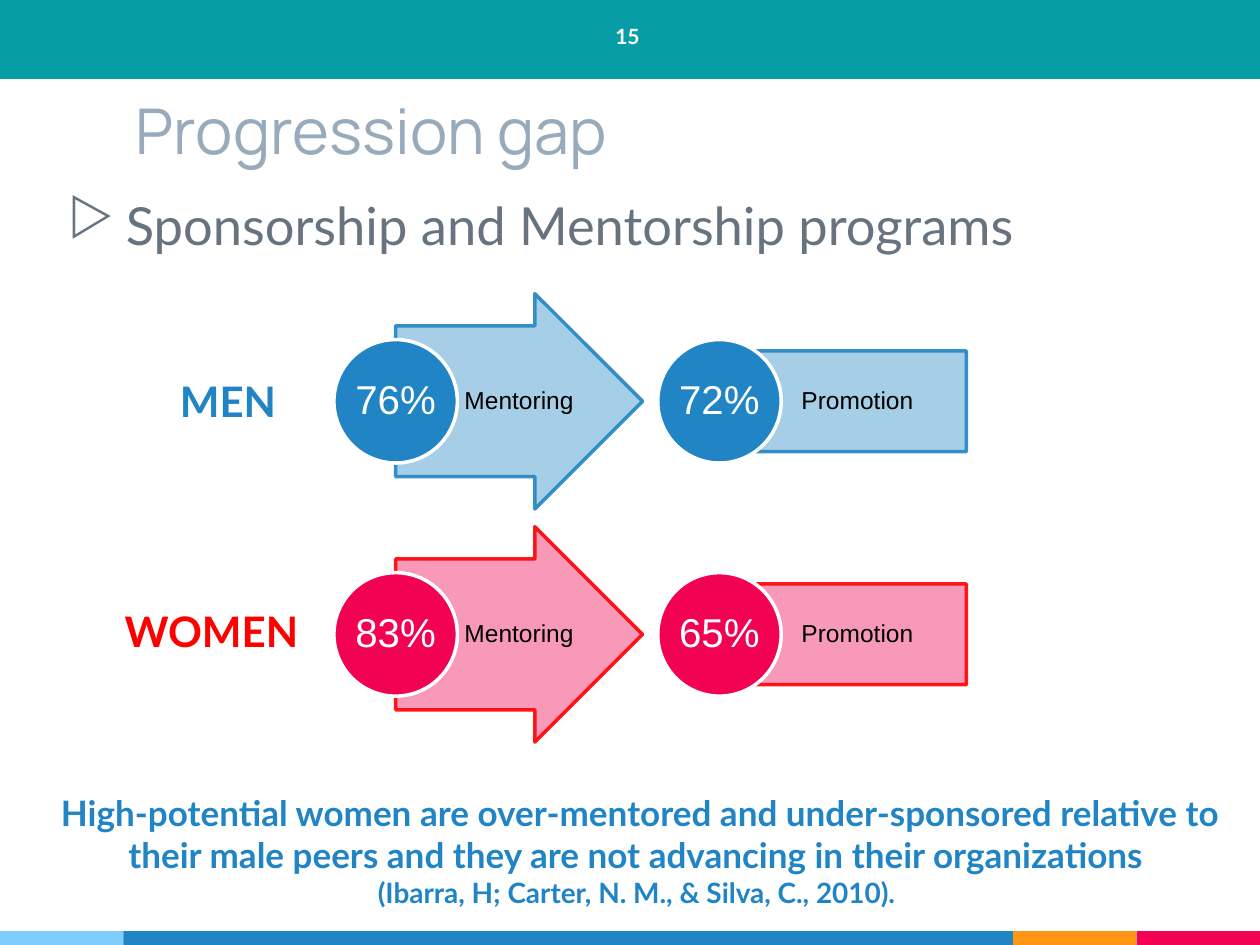
from lxml import etree
from pptx import Presentation
from pptx.dml.color import RGBColor
from pptx.enum.shapes import MSO_SHAPE
from pptx.enum.text import MSO_ANCHOR, PP_ALIGN
from pptx.oxml.ns import qn
from pptx.util import Inches, Pt

RECTANGLE, ELLIPSE, ARROW = MSO_SHAPE.RECTANGLE, MSO_SHAPE.OVAL, MSO_SHAPE.RIGHT_ARROW
TOP, MIDDLE, BOTTOM = MSO_ANCHOR.TOP, MSO_ANCHOR.MIDDLE, MSO_ANCHOR.BOTTOM
LEFT, CENTER = PP_ALIGN.LEFT, PP_ALIGN.CENTER

BLUE = RGBColor(0x21, 0x85, 0xC5)
SKY = RGBColor(0x7E, 0xCE, 0xFD)
ORANGE = RGBColor(0xFF, 0x97, 0x15)
PINK = RGBColor(0xF2, 0x02, 0x53)
RED = RGBColor(0xFF, 0x00, 0x00)
TEAL = RGBColor(0x06, 0x9D, 0xA6)
TITLE_GREY = RGBColor(0x97, 0xAB, 0xBC)
BODY_GREY = RGBColor(0x67, 0x74, 0x80)
WHITE = RGBColor(0xFF, 0xFF, 0xFF)
BLACK = RGBColor(0x00, 0x00, 0x00)


def set_opacity(fill_owner, percent):
    """Make the solid fill of a shape or line element partly transparent."""
    color = fill_owner.find(qn("a:solidFill"))[0]
    etree.SubElement(color, qn("a:alpha")).set("val", str(percent * 1000))


def add_block(slide, kind, box, fill, line=None, line_width=2):
    shape = slide.shapes.add_shape(kind, *map(Inches, box))
    shape.shadow.inherit = False
    shape.fill.solid()
    shape.fill.fore_color.rgb = fill
    if line is None:
        shape.line.fill.background()
    else:
        shape.line.color.rgb = line
        shape.line.width = Pt(line_width)
    return shape


def add_text(slide, box, lines, color, font="Lato", bold=False, align=LEFT,
             anchor=TOP, insets=(0.1, 0.05, 0.1, 0.05)):
    """Add a text box; lines holds one (text, size) pair per paragraph."""
    text_frame = slide.shapes.add_textbox(*map(Inches, box)).text_frame
    text_frame.word_wrap = True
    text_frame.vertical_anchor = anchor
    (text_frame.margin_left, text_frame.margin_top,
     text_frame.margin_right, text_frame.margin_bottom) = map(Inches, insets)
    text_frame.text = "\n".join(text for text, _ in lines)
    for paragraph, (_, size) in zip(text_frame.paragraphs, lines):
        paragraph.alignment = align
        font_format = paragraph.runs[0].font
        font_format.name = font
        font_format.size = Pt(size)
        font_format.bold = bold
        font_format.color.rgb = color
    return text_frame


def add_footer(slide, left, top, width, height):
    end = 0.98
    middle = width - 3 * end
    for color, part in ((SKY, end), (BLUE, middle), (ORANGE, end), (PINK, end)):
        add_block(slide, RECTANGLE, (left, top, part, height), color)
        left += part


def add_header(slide, left, top, width, height):
    add_block(slide, RECTANGLE, (left, top, width, height), TEAL, TEAL, 0.75)
    add_text(slide, (left + 4.45, top + 0.14, 1.06, 0.3), [("15", 12)], WHITE,
             bold=True, align=CENTER)


def add_bullet(slide, left, top, width, height):
    text_frame = add_text(slide, (left, top, width, height),
                          [("Sponsorship and Mentorship programs", 30)],
                          BODY_GREY, insets=(0.1,) * 4)
    paragraph = text_frame.paragraphs[0]
    paragraph.space_before = paragraph.space_after = Pt(6)
    properties = paragraph.runs[0]._r.getparent().get_or_add_pPr()
    properties.set("marL", str(Inches(0.5)))
    properties.set("indent", str(Inches(-0.46)))
    bullet_color = etree.SubElement(properties, qn("a:buClr"))
    etree.SubElement(bullet_color, qn("a:srgbClr")).set("val", str(BODY_GREY))
    etree.SubElement(properties, qn("a:buChar")).set("char", "▷")


def add_stage(slide, left, middle, kind, height, label, label_width, share, fill, line):
    """Add a pale arrow or bar whose left end carries a circle with a share."""
    circle, inner = 0.98, 0.69
    pale = add_block(slide, kind, (left + circle / 2, middle - height / 2, 1.96, height),
                     fill, line)
    if kind == ARROW:
        pale.adjustments[0], pale.adjustments[1] = 0.7, 0.5
    set_opacity(pale._element.spPr, 40)
    set_opacity(pale._element.spPr.find(qn("a:ln")), 90)
    label_height = height * 0.7
    label_frame = add_text(
        slide, (left + circle, middle - label_height / 2, label_width, label_height),
        [(label, 14)], BLACK, "Arial", align=CENTER, anchor=MIDDLE,
        insets=(0.04, 0.01, 0.02, 0.01))
    add_block(slide, ELLIPSE, (left, middle - circle / 2, circle, circle), fill, WHITE)
    share_frame = add_text(
        slide, (left + (circle - inner) / 2, middle - inner / 2, inner, inner),
        [(share, 23)], WHITE, "Arial", align=CENTER, anchor=MIDDLE, insets=(0.02,) * 4)
    for text_frame in (label_frame, share_frame):
        text_frame.paragraphs[0].line_spacing = 0.9


def add_process(slide, left, top, height, mentoring, promotion, fill, line):
    middle = top + height / 2
    add_stage(slide, left, middle, ARROW, height, "Mentoring", 0.96, mentoring, fill, line)
    add_stage(slide, left + 2.57, middle, RECTANGLE, 0.8, "Promotion", 1.19, promotion,
              fill, line)


def main():
    presentation = Presentation()
    presentation.slide_width, presentation.slide_height = Inches(10), Inches(7.5)
    slide = presentation.slides.add_slide(presentation.slide_layouts[6])

    add_footer(slide, 0, 7.39, 10, 0.11)

    # Title and topic
    add_text(slide, (0.98, 0.18, 8.36, 1.25), [("Progression gap", 36)], TITLE_GREY,
             "Manrope", anchor=BOTTOM, insets=(0.1,) * 4)
    add_bullet(slide, 0.4, 1.43, 8.93, 0.96)

    # Conclusion with its reference
    add_text(slide, (0.38, 6.23, 9.4, 1.04), [
        ("High-potential women are over-mentored and under-sponsored relative to "
         "their male peers and they are not advancing in their organizations ", 20),
        ("(Ibarra, H; Carter, N. M., & Silva, C., 2010). ", 16),
    ], BLUE, bold=True, align=CENTER)

    # Mentoring and promotion shares
    add_process(slide, 2.65, 4.18, 1.71, "83%", "65%", PINK, RED)
    add_process(slide, 2.65, 2.33, 1.71, "76%", "72%", BLUE, BLUE)
    add_text(slide, (1.33, 2.93, 1.83, 0.5), [("MEN", 24)], BLUE, bold=True)
    add_text(slide, (0.89, 4.76, 1.83, 0.5), [("WOMEN", 24)], RED, bold=True)

    add_header(slide, 0, 0, 10, 0.62)
    presentation.save("out.pptx")


if __name__ == "__main__":
    main()
